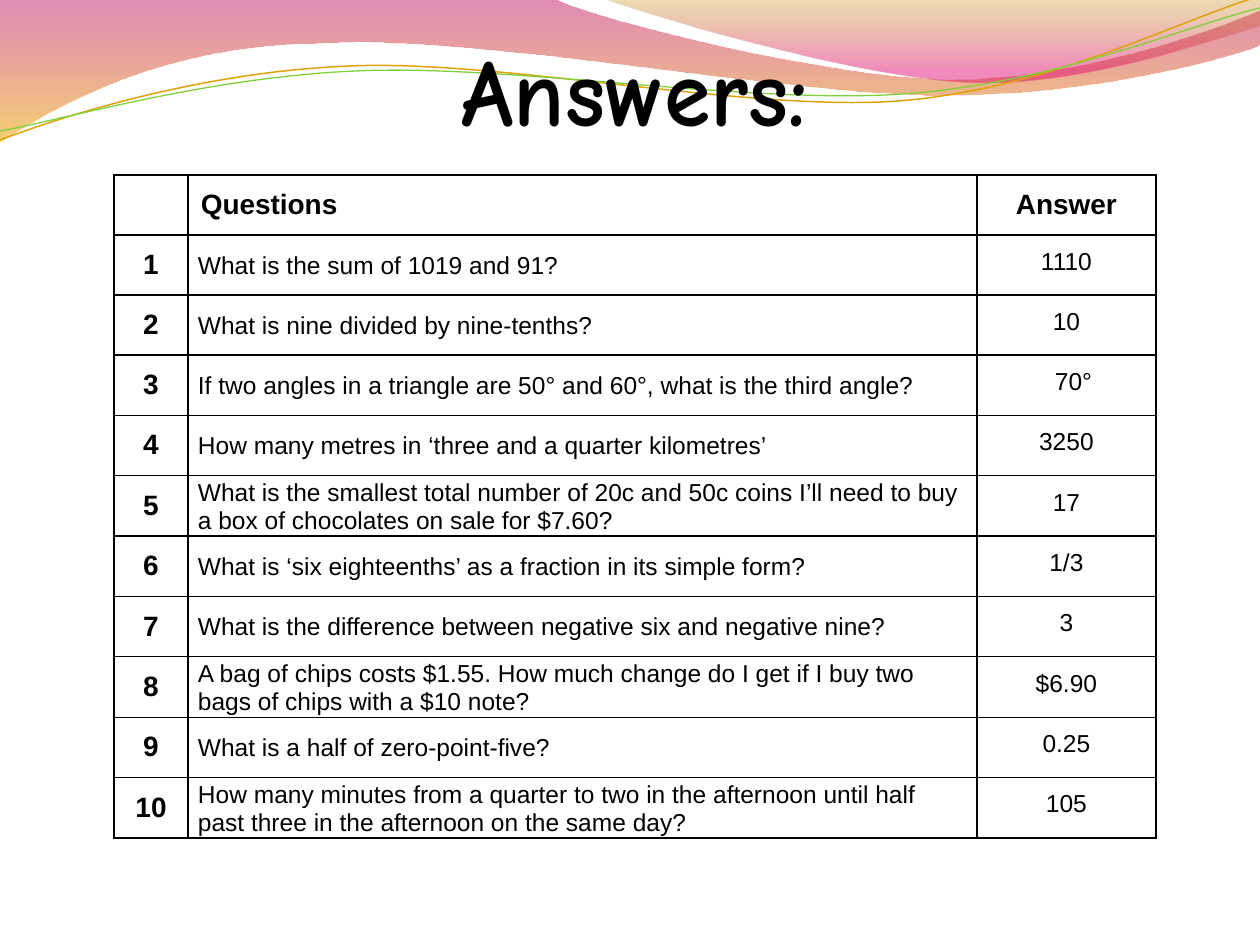
from dataclasses import dataclass

from lxml import etree
from pptx import Presentation
from pptx import util as u
from pptx.dml.color import RGBColor
from pptx.enum import text
from pptx.oxml.ns import qn

EMU_PER_PX = 914400 / 126
COLORS = {
    "ink": "000000", "magenta": "BD0059", "amber": "F0AB00", "ochre": "C38B00",
    "pink": "E1006B", "gold": "E0A209", "green": "7FD13B",
}
Point = tuple[int, int]
Segment = tuple[Point, ...]  # one point: straight line; three points: Bezier curve


@dataclass(frozen=True)
class Stop:
    position: float
    color: str
    opacity: int


@dataclass(frozen=True)
class Wave:
    start: Point
    segments: tuple[Segment, ...]
    stops: tuple[Stop, Stop]


@dataclass(frozen=True)
class Strand:
    start: Point
    segments: tuple[Segment, ...]
    color: str
    width: float


@dataclass(frozen=True)
class Question:
    wording: str
    answer: str
    answer_indent: int = 0


@dataclass(frozen=True)
class CellStyle:
    size: int
    bold: bool = False
    align: text.PP_ALIGN = text.PP_ALIGN.CENTER
    margins: tuple[int, int, int, int] = (13, 6, 13, 6)
    space: int = 0
    line_points: int = 0


WAVES = (
    Wave((0, -1), (
        ((554, -1),),
        ((600, 21), (837, 79), (955, 79)),
        ((1075, 79), (1207, 33), (1260, 11)),
        ((1261, 45),),
        ((1239, 55), (1096, 96), (940, 95)),
        ((784, 95), (481, 35), (324, 43)),
        ((163, 44), (58, 105), (-1, 142)),
        ((0, -1),),
    ), (Stop(0, "magenta", 45), Stop(1, "amber", 55))),
    Wave((604, -1), (
        ((641, 14), (859, 78), (969, 82)),
        ((1079, 87), (1211, 40), (1260, 26)),
        ((1260, 0),),
        ((604, -1),),
    ), (Stop(0, "ochre", 30), Stop(0.8, "pink", 45))),
)
STRANDS = (
    Strand((0, 140), (
        ((60, 117), (199, 72), (349, 66)),
        ((498, 59), (747, 112), (898, 101)),
        ((1050, 89), (1182, 19), (1257, -3)),
    ), "gold", 0.85),
    Strand((0, 131), (
        ((59, 121), (207, 77), (357, 71)),
        ((508, 64), (752, 105), (903, 94)),
        ((1053, 84), (1186, 26), (1260, 8)),
    ), "green", 0.75),
)
QUESTIONS = (
    Question("What is the sum of 1019 and 91?", "1110"),
    Question("What is nine divided by nine-tenths?", "10"),
    Question("If two angles in a triangle are 50° and 60°, what is the third angle?", "70°", 14),
    Question("How many metres in ‘three and a quarter kilometres’", "3250"),
    Question("What is the smallest total number of 20c and 50c coins I’ll need to buy "
             "a box of chocolates on sale for $7.60?", "17"),
    Question("What is ‘six eighteenths’ as a fraction in its simple form?", "1/3"),
    Question("What is the difference between negative six and negative nine?", "3"),
    Question("A bag of chips costs $1.55. How much change do I get if I buy two "
             "bags of chips with a $10 note?", "$6.90"),
    Question("What is a half of zero-point-five?", "0.25"),
    Question("How many minutes from a quarter to two in the afternoon until half "
             "past three in the afternoon on the same day?", "105"),
)
COLUMN_WIDTHS = (74, 789, 179)
TABLE_HEIGHT = 661
LABEL = CellStyle(16, bold=True)
HEADING = CellStyle(16, bold=True, align=text.PP_ALIGN.LEFT, space=2)
WORDING = CellStyle(14, align=text.PP_ALIGN.LEFT, margins=(10, 2, 9, 0), space=2)


def px(length: float) -> u.Emu:
    return u.Emu(round(length * EMU_PER_PX))


def rgb(name: str) -> RGBColor:
    return RGBColor.from_string(COLORS[name])


def add_outline(page, start: Point, segments: tuple[Segment, ...], close: bool):
    """Build a freeform, joining the three points of each curve into one Bezier."""
    builder = page.shapes.build_freeform(px(start[0]), px(start[1]))
    points = [(px(x), px(y)) for segment in segments for x, y in segment]
    builder.add_line_segments(points, close=close)
    shape = builder.convert_to_shape()
    shape.shadow.inherit = False
    lines = iter(list(shape._element.iter(qn("a:lnTo"))))
    for segment in segments:
        steps = [next(lines) for _ in segment]
        if len(steps) == 3:
            curve = etree.Element(qn("a:cubicBezTo"))
            steps[0].addprevious(curve)
            for step in steps:
                curve.append(step[0])
                step.getparent().remove(step)
    return shape


def add_wave(page, wave: Wave) -> None:
    shape = add_outline(page, wave.start, wave.segments, close=True)
    shape.line.fill.background()
    shape.fill.gradient()
    shape.fill.gradient_angle = 270
    for target, stop in zip(shape.fill.gradient_stops, wave.stops):
        target.position = stop.position
        target.color.rgb = rgb(stop.color)
    for color, stop in zip(shape._element.spPr.iter(qn("a:srgbClr")), wave.stops):
        etree.SubElement(color, qn("a:alpha"), val=str(stop.opacity * 1000))


def add_strand(page, strand: Strand) -> None:
    shape = add_outline(page, strand.start, strand.segments, close=False)
    shape.fill.background()
    shape.line.color.rgb = rgb(strand.color)
    shape.line.width = u.Pt(strand.width)


def add_span(para, wording: str, size: int, bold: bool, font: str) -> None:
    span = para.add_run()
    span.text = wording
    span.font.size = u.Pt(size)
    span.font.bold = bold
    span.font.name = font
    span.font.color.rgb = rgb("ink")


def add_title(page) -> None:
    box = page.shapes.add_textbox(px(179), px(26), px(912), px(126))
    box.text_frame.word_wrap = True
    box.text_frame.auto_size = text.MSO_AUTO_SIZE.SHAPE_TO_FIT_TEXT
    para = box.text_frame.paragraphs[0]
    para.alignment = text.PP_ALIGN.CENTER
    add_span(para, "Answers:", 54, True, "Comic Neue")


def set_borders(cell, left_top: float = 1) -> None:
    properties = cell._tc.get_or_add_tcPr()
    widths = {"a:lnL": left_top, "a:lnR": 1, "a:lnT": left_top, "a:lnB": 1}
    for index, (tag, width) in enumerate(widths.items()):
        line = etree.Element(qn(tag), w=str(u.Pt(width)))
        fill = etree.SubElement(line, qn("a:solidFill"))
        etree.SubElement(fill, qn("a:srgbClr"), val=COLORS["ink"])
        properties.insert(index, line)


def fill_cell(cell, wording: str, style: CellStyle) -> None:
    cell.vertical_anchor = text.MSO_ANCHOR.MIDDLE
    cell.margin_left, cell.margin_top, cell.margin_right, cell.margin_bottom = map(px, style.margins)
    para = cell.text_frame.paragraphs[0]
    para.alignment = style.align
    para.space_before = para.space_after = u.Pt(style.space)
    if style.line_points:
        para.line_spacing = u.Pt(style.line_points)
    add_span(para, wording, style.size, style.bold, "Arial")


def add_answer_table(page) -> None:
    rows = len(QUESTIONS) + 1
    table = page.shapes.add_table(rows, len(COLUMN_WIDTHS), px(114), px(175),
                                  px(sum(COLUMN_WIDTHS)), px(TABLE_HEIGHT)).table
    table.first_row = table.horz_banding = False
    for column, width in zip(table.columns, COLUMN_WIDTHS):
        column.width = px(width)
    for row in table.rows:
        row.height = px(TABLE_HEIGHT / rows)
    for index, cell in enumerate(table.iter_cells()):
        cell.fill.background()
        set_borders(cell, 1 if index else 0.75)
    fill_cell(table.cell(0, 1), "Questions", HEADING)
    fill_cell(table.cell(0, 2), "Answer", LABEL)
    for number, question in enumerate(QUESTIONS, 1):
        answer = CellStyle(14, margins=(question.answer_indent, 0, 0, 0), line_points=12)
        fill_cell(table.cell(number, 0), str(number), LABEL)
        fill_cell(table.cell(number, 1), question.wording, WORDING)
        fill_cell(table.cell(number, 2), question.answer, answer)


def main() -> None:
    deck = Presentation()
    deck.slide_width, deck.slide_height = px(1260), px(945)
    page = deck.slides.add_slide(deck.slide_layouts[6])
    for wave in WAVES:
        add_wave(page, wave)
    for strand in STRANDS:
        add_strand(page, strand)
    add_title(page)
    add_answer_table(page)
    deck.save("out.pptx")


if __name__ == "__main__":
    main()
